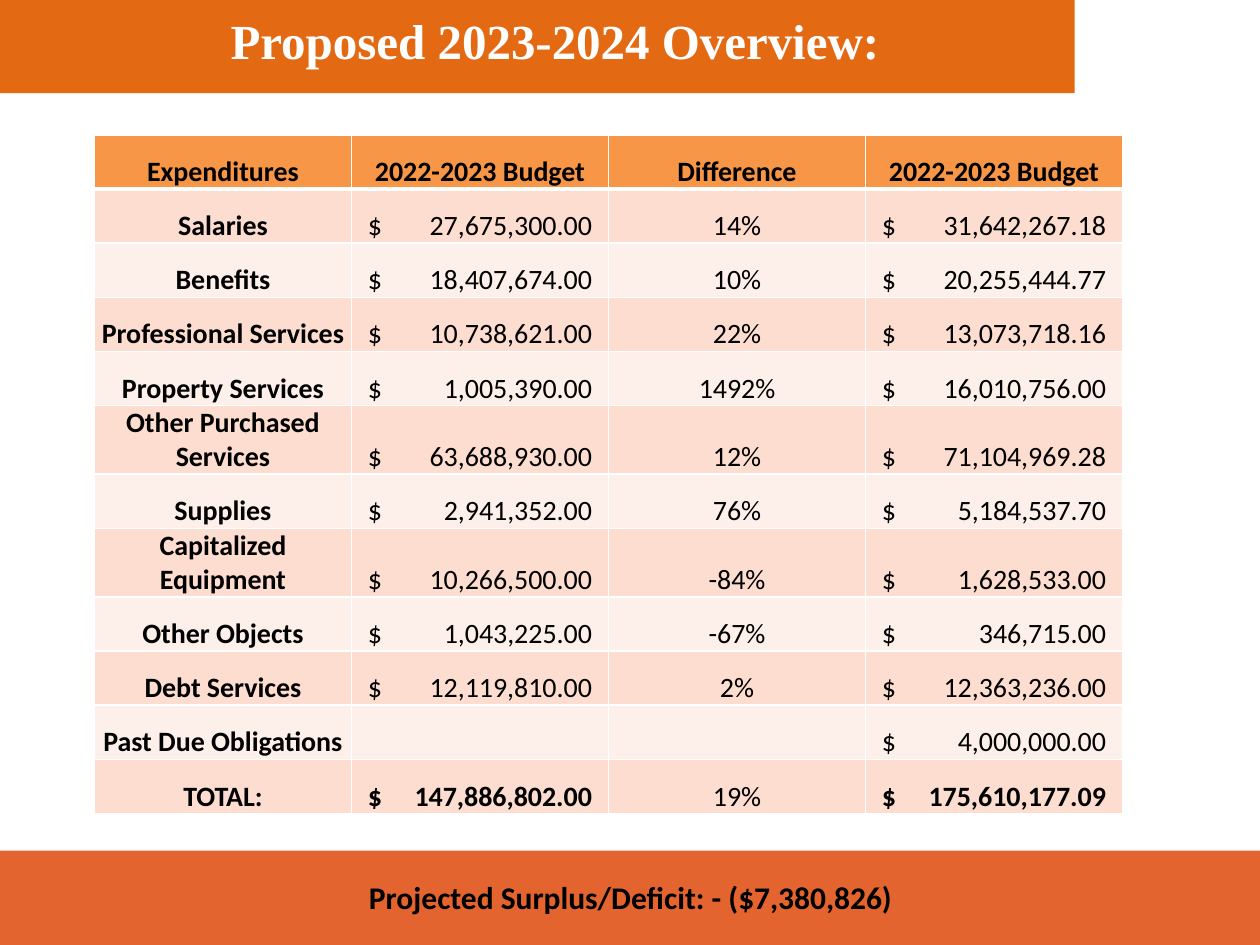
from lxml import etree
from pptx import Presentation
from pptx.dml.color import RGBColor
from pptx.enum.shapes import MSO_SHAPE
from pptx.enum.text import MSO_ANCHOR, PP_ALIGN
from pptx.oxml.ns import qn
from pptx.util import Inches, Pt

RECTANGLE = MSO_SHAPE.RECTANGLE
TOP, BOTTOM = MSO_ANCHOR.TOP, MSO_ANCHOR.BOTTOM
LEFT, CENTER = PP_ALIGN.LEFT, PP_ALIGN.CENTER

TITLE = "Proposed 2023-2024 Overview:"
FOOTER = "Projected Surplus/Deficit: - ($7,380,826)"
HEADER = ("Expenditures", "2022-2023 Budget", "Difference", "2022-2023 Budget")
EXPENDITURES = [
    ("Salaries", "27,675,300.00", "14%", "31,642,267.18"),
    ("Benefits", "18,407,674.00", "10%", "20,255,444.77"),
    ("Professional Services", "10,738,621.00", "22%", "13,073,718.16"),
    ("Property Services", "1,005,390.00", "1492%", "16,010,756.00"),
    ("Other Purchased Services", "63,688,930.00", "12%", "71,104,969.28"),
    ("Supplies", "2,941,352.00", "76%", "5,184,537.70"),
    ("Capitalized Equipment", "10,266,500.00", "-84%", "1,628,533.00"),
    ("Other Objects", "1,043,225.00", "-67%", "346,715.00"),
    ("Debt Services", "12,119,810.00", "2%", "12,363,236.00"),
    ("Past Due Obligations", "", "", "4,000,000.00"),
    ("TOTAL:", "147,886,802.00", "19%", "175,610,177.09"),
]
ROWS = [HEADER] + EXPENDITURES
MONEY_COLUMNS = (1, 3)
BARS = [((0, 6.75, 10, 0.75), "E4642F"), ((0, 0, 8.53, 0.74), "E46913")]
HEADER_FILL, BAND_FILLS = "F79646", ("FDEFE9", "FCDDCF")
COLUMN_WIDTH, ROW_HEIGHT = 2.04, 0.43
MONEY_INDENT = 0.13
BLACK, WHITE = "000000", "FFFFFF"


def color(value):
    return RGBColor.from_string(value)


def add_run(paragraph, text, size, font_name, font_color, bold):
    run = paragraph.add_run()
    run.text = text
    run.font.size = Pt(size)
    run.font.name = font_name
    run.font.bold = bold
    run.font.color.rgb = color(font_color)
    return run


def add_bar(shapes, box, fill):
    bar = shapes.add_shape(RECTANGLE, *map(Inches, box))
    bar.shadow.inherit = False
    bar.fill.solid()
    bar.fill.fore_color.rgb = color(fill)
    bar.line.fill.background()


def set_border(cell, side, width):
    properties = cell._tc.get_or_add_tcPr()
    line = etree.SubElement(properties, qn("a:" + side), w=str(Pt(width)))
    fill = etree.SubElement(line, qn("a:solidFill"))
    etree.SubElement(fill, qn("a:srgbClr"), val=WHITE)


def add_right_tab(paragraph, position):
    properties = paragraph._p.get_or_add_pPr()
    tabs = etree.SubElement(properties, qn("a:tabLst"))
    etree.SubElement(tabs, qn("a:tab"), pos=str(Inches(position)), algn="r")


def fill_cell(cell, row, column, text):
    is_header, is_total = row == 0, row == len(ROWS) - 1
    is_money = column in MONEY_COLUMNS and not is_header
    cell.margin_left = cell.margin_right = cell.margin_top = cell.margin_bottom = 0
    cell.vertical_anchor = BOTTOM
    for side in ("lnL", "lnR", "lnT", "lnB"):
        under_header = (row, side) in ((0, "lnB"), (1, "lnT"))
        set_border(cell, side, 3 if under_header else 1)
    cell.fill.solid()
    cell.fill.fore_color.rgb = color(HEADER_FILL if is_header else BAND_FILLS[row % 2])
    if not text:
        return
    paragraph = cell.text_frame.paragraphs[0]
    paragraph.alignment = LEFT if is_money else CENTER
    if is_money:
        cell.margin_left = Inches(MONEY_INDENT)
        add_right_tab(paragraph, COLUMN_WIDTH - 2 * MONEY_INDENT)
        text = "$\t" + text
    bold = is_header or column == 0 or (is_total and is_money)
    add_run(paragraph, text, 16, "Calibri", BLACK, bold)


def add_budget_table(shapes):
    box = (0.75, 1.07, COLUMN_WIDTH * len(HEADER), ROW_HEIGHT * len(ROWS))
    table = shapes.add_table(len(ROWS), len(HEADER), *map(Inches, box)).table
    for column in table.columns:
        column.width = Inches(COLUMN_WIDTH)
    for row, values in enumerate(ROWS):
        table.rows[row].height = Inches(ROW_HEIGHT)
        for column, text in enumerate(values):
            fill_cell(table.cell(row, column), row, column, text)


def format_title(title):
    title.left, title.top, title.width, title.height = map(Inches, (1.83, 0.08, 5.41, 0.49))
    frame = title.text_frame
    frame.margin_left = frame.margin_right = frame.margin_top = frame.margin_bottom = 0
    frame.vertical_anchor = TOP
    paragraph = frame.paragraphs[0]
    paragraph.alignment = LEFT
    add_run(paragraph, TITLE, 28, "Times New Roman", WHITE, True)


def main():
    presentation = Presentation()
    presentation.slide_width, presentation.slide_height = Inches(10), Inches(7.5)
    slide = presentation.slides.add_slide(presentation.slide_layouts[5])
    shapes = slide.shapes
    for box, fill in BARS:
        add_bar(shapes, box, fill)
    title = shapes.title
    shapes._spTree.append(title._element)
    format_title(title)
    add_budget_table(shapes)
    footer = shapes.add_textbox(*map(Inches, (2.83, 6.92, 4.67, 0.4)))
    footer.text_frame.word_wrap = True
    add_run(footer.text_frame.paragraphs[0], FOOTER, 18, "Calibri", BLACK, True)
    presentation.save("out.pptx")


if __name__ == "__main__":
    main()
